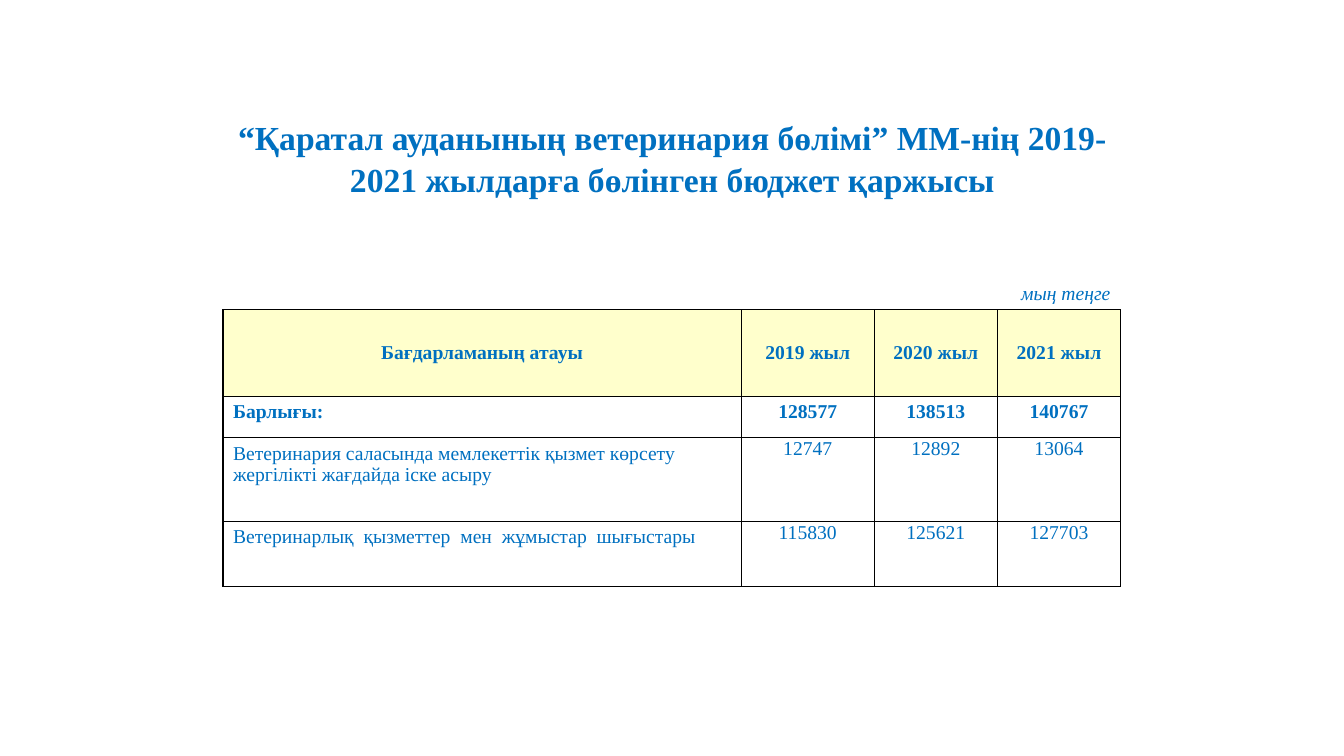
from pptx import Presentation
from pptx.dml.color import RGBColor
from pptx.enum import text
from pptx.oxml import parse_xml
from pptx.oxml.ns import nsdecls
from pptx.util import Pt

FONT = "Times New Roman"
BLUE, CREAM, WHITE, BLACK = "0070C0", "FFFFCC", "FFFFFF", "000000"
COLUMN_WIDTHS = [370.2, 95, 88, 88]
ROW_HEIGHTS = [46.8, 61.9, 29.5, 59.8, 46.8]
UNIT = "мың теңге"
BUDGET = [
    ["Бағдарламаның атауы", "2019 жыл", "2020 жыл", "2021 жыл"],
    ["Барлығы:", "128577", "138513", "140767"],
    ["Ветеринария саласында мемлекеттік қызмет көрсету жергілікті жағдайда іске асыру",
     "12747", "12892", "13064"],
    ["Ветеринарлық  қызметтер  мен  жұмыстар  шығыстары",
     "115830", "125621", "127703"],
]
CENTER, RIGHT, LEFT = text.PP_ALIGN.CENTER, text.PP_ALIGN.RIGHT, text.PP_ALIGN.LEFT
TOP, MIDDLE, BOTTOM = text.MSO_ANCHOR.TOP, text.MSO_ANCHOR.MIDDLE, text.MSO_ANCHOR.BOTTOM


def rgb(hex_color):
    return RGBColor.from_string(hex_color)


def write(tf, words, size, align, bold=False, italic=False):
    tf.text = words
    p = tf.paragraphs[0]
    p.alignment = align
    font = p.runs[0].font
    font.name, font.size, font.bold, font.italic = FONT, Pt(size), bold, italic
    font.color.rgb = rgb(BLUE)
    return p


def add_borders(cell, sides):
    """Draw 1 pt black borders on the given sides, in the order L, R, T, B."""
    tc_pr = cell._tc.get_or_add_tcPr()
    for side in sides:
        tc_pr.append(parse_xml(
            f'<a:ln{side} {nsdecls("a")} w="12700"><a:solidFill>'
            f'<a:srgbClr val="{BLACK}"/></a:solidFill></a:ln{side}>'))


def set_title(slide, words):
    title = slide.shapes.title
    title.left, title.top, title.width, title.height = Pt(154), Pt(50.4), Pt(652.3), Pt(95.8)
    tf = title.text_frame
    tf.word_wrap = True
    tf.auto_size = text.MSO_AUTO_SIZE.NONE
    tf.vertical_anchor = BOTTOM
    write(tf, words, 24, CENTER, bold=True).line_spacing = 1.06


def fill_unit_row(table):
    for cell in table.rows[0].cells:
        add_borders(cell, "B")
        cell.fill.background()
    unit = table.cell(0, 2)
    unit.merge(table.cell(0, 3))
    unit.vertical_anchor = BOTTOM
    write(unit.text_frame, UNIT, 14, RIGHT, italic=True)


def fill_budget_cell(cell, words, row, col):
    is_header = row == 0
    add_borders(cell, "LRTB")
    cell.fill.solid()
    cell.fill.fore_color.rgb = rgb(CREAM if is_header else WHITE)
    cell.vertical_anchor = MIDDLE if is_header else TOP
    if row > 1 and col > 0:
        cell.margin_left = cell.margin_right = cell.margin_top = Pt(0.7)
        cell.margin_bottom = 0
    write(cell.text_frame, words, 14, CENTER if is_header or col else LEFT, bold=row < 2)


def add_budget_table(slide):
    frame = slide.shapes.add_table(
        len(ROW_HEIGHTS), len(COLUMN_WIDTHS), Pt(159.3), Pt(174.4),
        Pt(sum(COLUMN_WIDTHS)), Pt(sum(ROW_HEIGHTS)))
    table = frame.table
    table.first_row = table.horz_banding = False
    for column, width in zip(table.columns, COLUMN_WIDTHS):
        column.width = Pt(width)
    for row, height in zip(table.rows, ROW_HEIGHTS):
        row.height = Pt(height)
    fill_unit_row(table)
    for r, values in enumerate(BUDGET):
        for c, words in enumerate(values):
            fill_budget_cell(table.cell(r + 1, c), words, r, c)


def main():
    prs = Presentation()
    prs.slide_width, prs.slide_height = Pt(960), Pt(540)
    slide = prs.slides.add_slide(prs.slide_layouts[5])
    add_budget_table(slide)
    set_title(slide, "“Қаратал ауданының ветеринария бөлімі” ММ-нің "
                     "2019-2021 жылдарға бөлінген бюджет қаржысы")
    prs.save("out.pptx")


if __name__ == "__main__":
    main()
